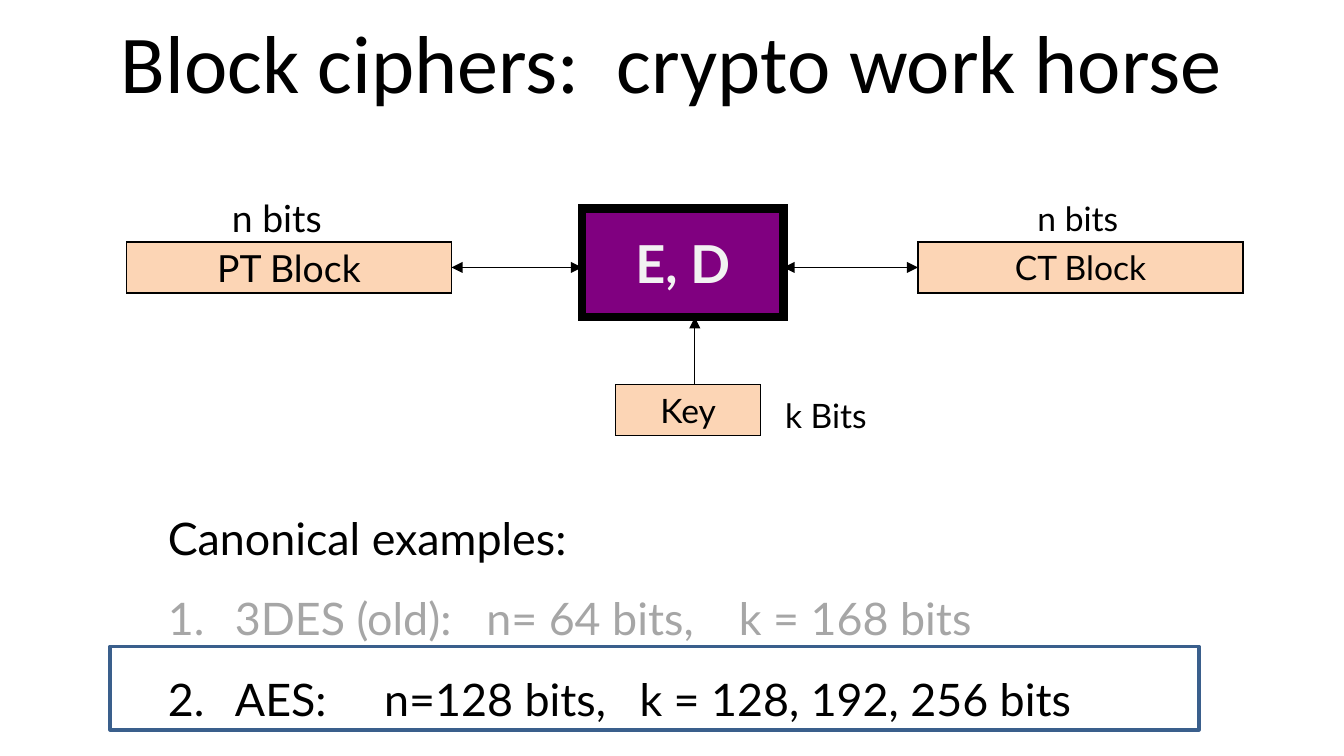
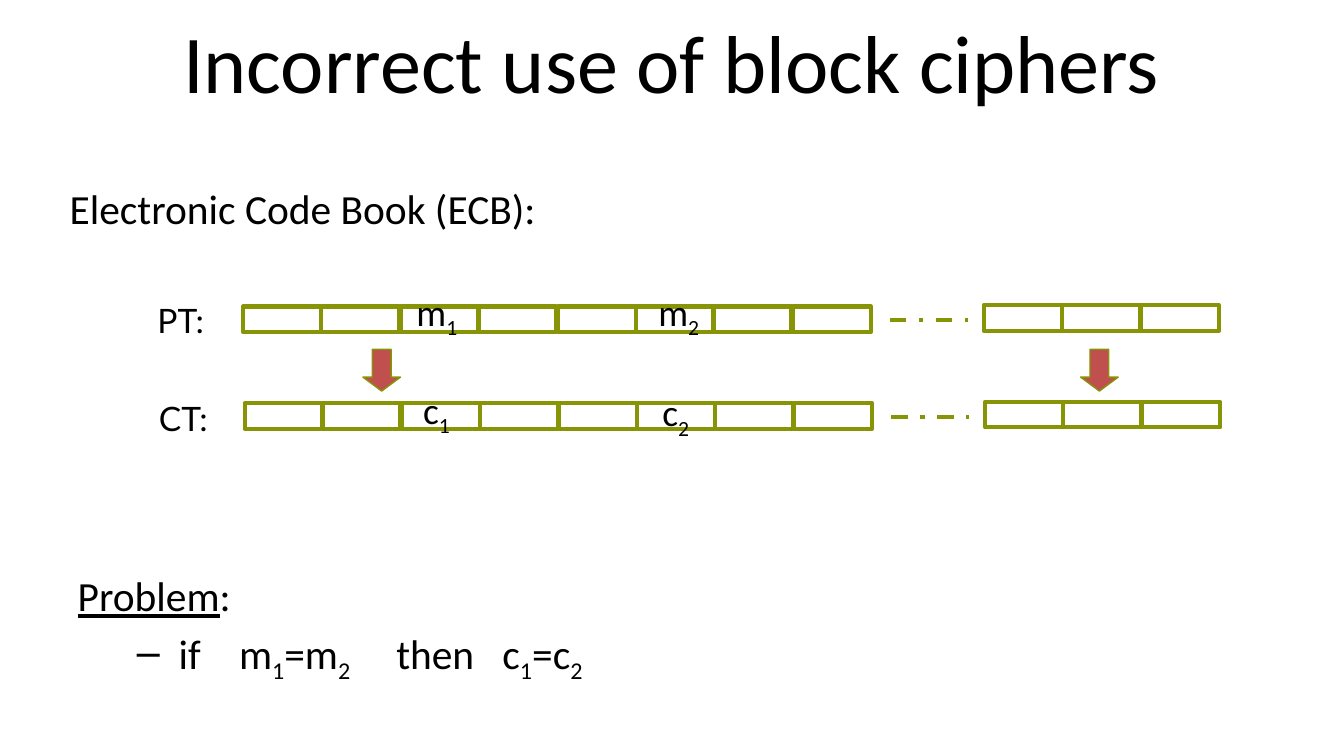
from dataclasses import dataclass

from lxml.etree import SubElement
from pptx import Presentation
from pptx.dml.color import RGBColor
from pptx.enum.dml import MSO_LINE
from pptx.enum.shapes import MSO_CONNECTOR, MSO_SHAPE
from pptx.enum.text import MSO_ANCHOR, MSO_AUTO_SIZE, PP_ALIGN
from pptx.oxml.ns import qn
from pptx.presentation import Presentation as Deck
from pptx.shapes.autoshape import Shape
from pptx.shapes.connector import Connector
from pptx.slide import Slide
from pptx.text.text import _Paragraph as Paragraph
from pptx.util import Emu, Pt

EMU_PER_PX = 9144
BLACK = "000000"
PEACH = "FCD5B5"
PURPLE = "800080"
PALE = "F2F2F2"
GRAY = "A6A6A6"
BLUE = "3A5F8C"
OLIVE = "869406"
RED = "C0504D"
HEADING_FONT = "Calibri"
LABEL_FONT = "Lato"
LEFT, RIGHT = 1, 3


@dataclass(frozen=True)
class Area:
    left: int
    top: int
    width: int
    height: int


@dataclass(frozen=True)
class Label:
    text: str
    area: Area
    size: int = 18


@dataclass(frozen=True)
class Example:
    text: str
    color: str
    tabs: tuple[int, ...]


@dataclass(frozen=True)
class CellRun:
    left: int
    rise: int
    width: int
    count: int


@dataclass(frozen=True)
class CipherRow:
    label: Label
    left: int
    top: int
    letter: str
    marks: tuple[Area, ...]


CELL_RUNS = (CellRun(0, 0, 467, 8), CellRun(551, 1, 175, 3))


def px(length: int) -> Emu:
    return Emu(length * EMU_PER_PX)


def rgb(color: str) -> RGBColor:
    return RGBColor.from_string(color)


def place(area: Area) -> tuple[Emu, Emu, Emu, Emu]:
    return px(area.left), px(area.top), px(area.width), px(area.height)


def write(para: Paragraph, text: str, *, size: float, font: str = LABEL_FONT,
          color: str = BLACK, bold: bool = False, underline: bool = False,
          subscript: bool = False) -> None:
    span = para.add_run()
    span.text = text
    span.font.size = Pt(size)
    span.font.name = font
    span.font.color.rgb = rgb(color)
    span.font.bold = bold
    span.font.underline = underline
    if subscript:
        span.font._element.set("baseline", "-25000")


def write_indexed(para: Paragraph, text: str, size: float) -> None:
    for index, part in enumerate(text.split("_")):
        if index:
            write(para, part[0], size=size, font=HEADING_FONT, subscript=True)
            part = part[1:]
        if part:
            write(para, part, size=size, font=HEADING_FONT)


def indent(para: Paragraph, margin: int, first: int = 0, *, bullet: str = "",
           numbered: bool = False, tabs: tuple[int, ...] = ()) -> None:
    properties = para._p.get_or_add_pPr()
    properties.set("marL", str(px(margin)))
    properties.set("indent", str(px(first)))
    if numbered:
        SubElement(properties, qn("a:buAutoNum"), type="arabicPeriod")
    if bullet:
        SubElement(properties, qn("a:buChar"), char=bullet)
    if tabs:
        stops = SubElement(properties, qn("a:tabLst"))
        for stop in tabs:
            SubElement(stops, qn("a:tab"), pos=str(px(stop)), algn="l")


def add_box(page: Slide, area: Area, *, fill: str = "", line: str = BLACK,
            weight: float = 0.75,
            kind: MSO_SHAPE = MSO_SHAPE.RECTANGLE) -> Shape:
    box = page.shapes.add_shape(kind, *place(area))
    box.shadow.inherit = False
    if fill:
        box.fill.solid()
        box.fill.fore_color.rgb = rgb(fill)
    else:
        box.fill.background()
    box.line.color.rgb = rgb(line)
    box.line.width = Pt(weight)
    return box


def add_block(page: Slide, label: Label, *, fill: str = PEACH,
              color: str = BLACK, weight: float = 0.75,
              bold: bool = False) -> Shape:
    box = add_box(page, label.area, fill=fill, weight=weight)
    SubElement(box.line._get_or_add_ln(), qn("a:miter"), lim="800000")
    frame = box.text_frame
    frame.word_wrap = False
    frame.vertical_anchor = MSO_ANCHOR.MIDDLE
    para = frame.paragraphs[0]
    para.alignment = PP_ALIGN.CENTER
    write(para, label.text, size=label.size, color=color, bold=bold)
    return box


def add_text_box(page: Slide, area: Area, *, wrap: bool = False,
                 grow: bool = True) -> Shape:
    box = page.shapes.add_textbox(*place(area))
    box.text_frame.word_wrap = wrap
    box.text_frame.auto_size = (
        MSO_AUTO_SIZE.SHAPE_TO_FIT_TEXT if grow else MSO_AUTO_SIZE.NONE)
    return box


def add_label(page: Slide, label: Label) -> None:
    para = add_text_box(page, label.area).text_frame.paragraphs[0]
    para.alignment = PP_ALIGN.CENTER
    write(para, label.text, size=label.size)


def add_line(page: Slide, start: tuple[int, int], end: tuple[int, int], *,
             color: str = BLACK, weight: float = 0.75, dashed: bool = False,
             arrows: tuple[str, ...] = ()) -> Connector:
    line = page.shapes.add_connector(
        MSO_CONNECTOR.STRAIGHT, *map(px, start + end))
    line.line.color.rgb = rgb(color)
    line.line.width = Pt(weight)
    if dashed:
        line.line.dash_style = MSO_LINE.DASH_DOT
    for arrow in arrows:
        SubElement(line.line._get_or_add_ln(), qn(f"a:{arrow}"),
                   type="triangle")
    SubElement(line._element.spPr, qn("a:effectLst"))
    return line


def add_page(deck: Deck, heading: str) -> Slide:
    page = deck.slides.add_slide(deck.slide_layouts[5])
    title = page.shapes.title
    title.left, title.top, title.width, title.height = place(
        Area(50, -2, 900, 94))
    title.text_frame.vertical_anchor = MSO_ANCHOR.MIDDLE
    para = title.text_frame.paragraphs[0]
    para.alignment = PP_ALIGN.CENTER
    write(para, heading, size=44, font=HEADING_FONT)
    return page


def add_cipher_page(deck: Deck) -> None:
    page = add_page(deck, "Block ciphers:  crypto work horse")
    add_block(page, Label("E, D", Area(433, 155, 150, 81), 28),
              fill=PURPLE, color=PALE, weight=4.5, bold=True)
    plain = add_block(page, Label("PT Block", Area(94, 180, 242, 38), 20))
    coded = add_block(page, Label("CT Block", Area(683, 180, 242, 38)))
    add_block(page, Label("Key", Area(458, 286, 108, 38)))

    both_ends = ("headEnd", "tailEnd")
    add_line(page, (336, 199), (433, 199),
             arrows=both_ends).begin_connect(plain, RIGHT)
    add_line(page, (583, 199), (683, 199),
             arrows=both_ends).end_connect(coded, LEFT)
    add_line(page, (517, 286), (517, 236), arrows=("tailEnd",))

    for label in (
        Label("n bits", Area(162, 140, 88, 44), 20),
        Label("n bits", Area(761, 142, 82, 40)),
        Label("k Bits", Area(574, 289, 81, 40)),
    ):
        add_label(page, label)

    frame = add_text_box(page, Area(115, 375, 729, 163)).text_frame
    intro = frame.paragraphs[0]
    indent(intro, 50, -50)
    write(intro, "Canonical examples:", size=24)
    for example in (
        Example("3DES (old):\tn= 64 bits,\tk = 168 bits", GRAY, (237, 425)),
        Example("AES:\tn=128 bits,\tk = 128, 192, 256 bits", BLACK,
                (161, 351)),
    ):
        para = frame.add_paragraph()
        para.line_spacing = 1.5
        indent(para, 50, -50, numbered=True, tabs=example.tabs)
        write(para, example.text, size=24, color=example.color)
    add_box(page, Area(82, 481, 810, 62), line=BLUE, weight=2)


def add_cipher_row(page: Slide, row: CipherRow) -> None:
    add_label(page, row.label)
    for run in CELL_RUNS:
        for index in range(run.count):
            left = row.left + run.left + round(run.width * index / run.count)
            add_box(page, Area(left, row.top - run.rise, 58, 19),
                    line=OLIVE, weight=2.25)
    middle = row.top + 10
    add_line(page, (row.left + 481, middle), (row.left + 539, middle),
             color=OLIVE, weight=2.25, dashed=True)
    for index, area in enumerate(row.marks, start=1):
        box = add_text_box(page, area, wrap=True)
        write_indexed(box.text_frame.paragraphs[0], f"{row.letter}_{index}",
                      20)


def add_code_book_page(deck: Deck) -> None:
    page = add_page(deck, "Incorrect use of block ciphers")
    size = 22.2
    frame = add_text_box(page, Area(42, 131, 908, 388), wrap=True,
                         grow=False).text_frame
    write(frame.paragraphs[0], "Electronic Code Book (ECB):", size=size,
          font=HEADING_FONT)
    problem = frame.add_paragraph()
    problem.space_before = Pt(181)
    indent(problem, 6)
    write(problem, "Problem", size=size, font=HEADING_FONT, underline=True)
    write(problem, ":", size=size, font=HEADING_FONT)
    reason = frame.add_paragraph()
    reason.level = 1
    reason.space_before = Pt(4.4)
    indent(reason, 81, -31, bullet="–", tabs=(126, 243, 322))
    write_indexed(reason, "if\tm_1=m_2\tthen\tc_1=c_2", size)

    for left in (270, 804):
        arrow = add_box(page, Area(left, 260, 28, 31), fill=RED, line=OLIVE,
                        kind=MSO_SHAPE.DOWN_ARROW)
        arrow.adjustments[1] = 0.37

    for row in (
        CipherRow(Label("PT:", Area(107, 218, 55, 40)), 181, 228, "m",
                  (Area(300, 210, 54, 44), Area(480, 210, 54, 44))),
        CipherRow(Label("CT:", Area(108, 291, 57, 40)), 182, 300, "c",
                  (Area(305, 283, 54, 44), Area(483, 285, 54, 44))),
    ):
        add_cipher_row(page, row)


def main() -> None:
    deck = Presentation()
    deck.slide_width = px(1000)
    deck.slide_height = Emu(deck.slide_width * 9 // 16)
    add_cipher_page(deck)
    add_code_book_page(deck)
    deck.save("out.pptx")


if __name__ == "__main__":
    main()
